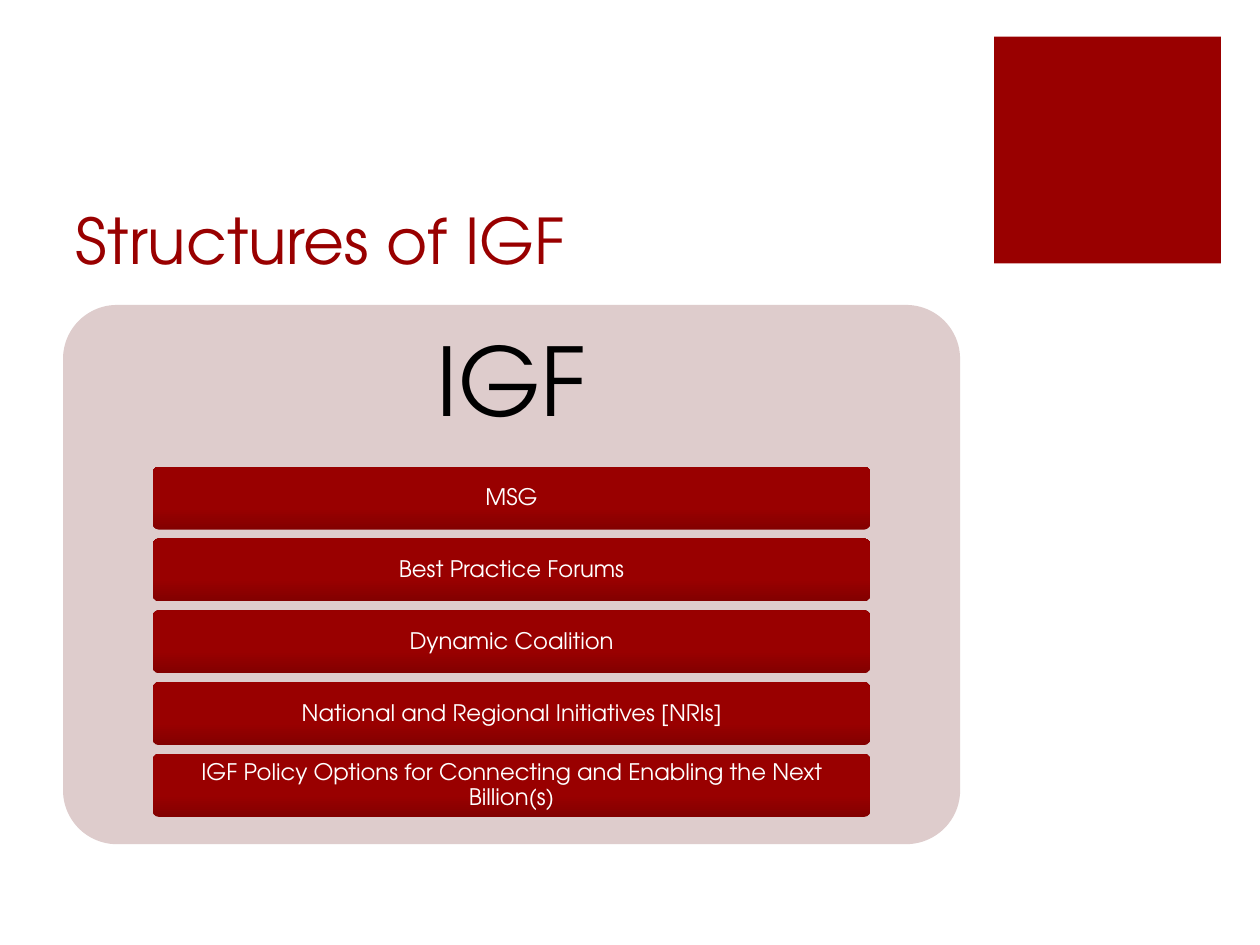
import pptx
import pptx.util
import pptx.dml.color
import pptx.enum.shapes
import pptx.enum.text

Inch = pptx.util.Inches
Kind = pptx.enum.shapes.MSO_SHAPE
Side = pptx.enum.text.PP_ALIGN
Hold = pptx.enum.text.MSO_ANCHOR


def tint(code):
    return pptx.dml.color.RGBColor.from_string(code)


def write(shape, text, size, code, side, hold, pad):
    frame = shape.text_frame
    form = {"word_wrap": True, "vertical_anchor": hold,
            "margin_left": Inch(pad[0]), "margin_right": Inch(pad[0]),
            "margin_top": Inch(pad[1]), "margin_bottom": Inch(pad[1])}
    for key, value in form.items():
        setattr(frame, key, value)
    para = frame.paragraphs[0]
    para.alignment = side
    run = para.add_run()
    run.text = text
    for key, value in {"name": "TeX Gyre Adventor", "size": pptx.util.Pt(size)}.items():
        setattr(run.font, key, value)
    run.font.color.rgb = tint(code)
    return para


deck = pptx.Presentation()
deck.slide_width, deck.slide_height = Inch(10), Inch(7.5)
slide = deck.slides.add_slide(deck.slide_layouts[6])
shapes = slide.shapes

left, top, wide, high = 0.5, 2.42, 7.12, 4.28
head = high * 0.3
inset = wide * 0.1
step, tall = 0.57, 0.5

block = shapes.add_shape(Kind.RECTANGLE, Inch(7.89), Inch(0.29), Inch(1.8), Inch(1.8))
title = shapes.add_textbox(Inch(left), Inch(1), Inch(wide), Inch(1.25))
write(title, "Structures of IGF", 36, "990000", Side.LEFT, Hold.BOTTOM, (0.1, 0.05))

panel = shapes.add_shape(Kind.ROUNDED_RECTANGLE, Inch(left), Inch(top), Inch(wide), Inch(high))
panel.adjustments[0] = 0.1
for shape, code in ((block, "990000"), (panel, "DECCCC")):
    shape.shadow.inherit = False
    shape.fill.solid()
    shape.fill.fore_color.rgb = tint(code)
    shape.line.fill.background()

label = shapes.add_textbox(Inch(left), Inch(top), Inch(wide), Inch(head))
write(label, "IGF", 54, "000000", Side.CENTER, Hold.MIDDLE, (0.23, 0.23)).line_spacing = 0.9

items = ["MSG", "Best Practice Forums", "Dynamic Coalition",
         "National and Regional Initiatives [NRIs]",
         "IGF Policy Options for Connecting and Enabling the Next Billion(s)"]
for row, item in enumerate(items):
    bar = shapes.add_shape(Kind.ROUNDED_RECTANGLE, Inch(left + inset), Inch(top + head + row * step),
                           Inch(wide - 2 * inset), Inch(tall))
    bar.adjustments[0] = 0.1
    bar.shadow.inherit = False
    bar.line.fill.background()
    bar.fill.gradient()
    bar.fill.gradient_angle = 90
    for stop, (place, code) in zip(bar.fill.gradient_stops, ((0, "830000"), (0.35, "990000"))):
        stop.position = place
        stop.color.rgb = tint(code)
    write(bar, item, 13, "FFFFFF", Side.CENTER, Hold.MIDDLE, (0.05, 0.04)).line_spacing = 0.9

deck.save("out.pptx")
